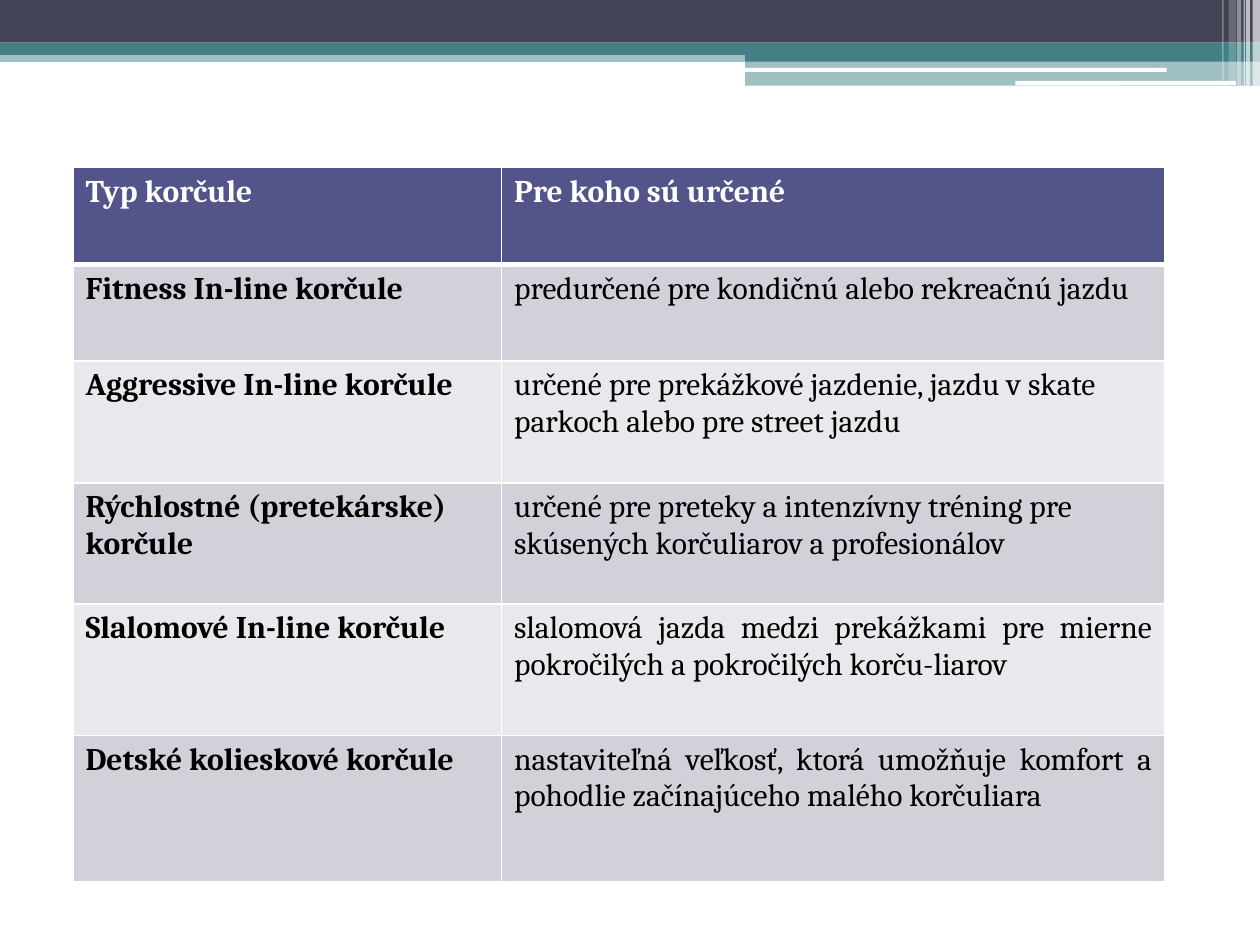
import pptx
import pptx.dml.color
import pptx.enum.shapes
import pptx.enum.text
import pptx.oxml
import pptx.oxml.ns
import pptx.util
from pptx.util import Cm

COLORS = {
    "navy": "424456",
    "teal": "438086",
    "white": "FFFFFF",
    "black": "000000",
    "header": "53548A",
    "band_dark": "D1D1DA",
    "band_light": "E9E9ED",
}
WIDTH, HEIGHT = 25.4, 19.05
PANEL_LEFT = 15.02
PANEL_WIDTH = WIDTH - PANEL_LEFT

# left, top, width, height (cm), colour, opacity in percent
BARS = [
    (0, 1.02, WIDTH, 0.23, "teal", 50),
    (0, 0, WIDTH, 0.86, "navy", 100),
    (0, 0.86, WIDTH, 0.25, "teal", 100),
    (PANEL_LEFT, 0.99, PANEL_WIDTH, 0.25, "teal", 100),
    (PANEL_LEFT, 1.23, PANEL_WIDTH, 0.5, "teal", 50),
]
ROUNDED_BARS = [(15.01, 1.37, 8.51, 0.08), (20.47, 1.63, 4.45, 0.09)]

# left, width, height (cm), opacity in percent
STRIPES = [
    (25.25, 0.15, 1.73, 65),
    (25.12, 0.08, 1.73, 65),
    (25.07, 0.03, 1.73, 60),
    (24.94, 0.08, 1.73, 40),
    (24.77, 0.15, 1.63, 20),
    (24.64, 0.03, 1.63, 30),
]

COL_WIDTHS = [8.64, 13.37]
ROW_HEIGHTS = [1.95, 1.95, 2.46, 2.44, 2.65, 2.94]
JUSTIFIED_ROWS = (4, 5)
ROWS = [
    ("Typ korčule", "Pre koho sú určené"),
    ("Fitness In-line korčule",
     "predurčené pre kondičnú alebo rekreačnú jazdu"),
    ("Aggressive In-line korčule",
     "určené pre prekážkové jazdenie, jazdu v skate parkoch alebo pre street jazdu"),
    ("Rýchlostné (pretekárske) korčule",
     "určené pre preteky a intenzívny tréning pre skúsených korčuliarov a profesionálov"),
    ("Slalomové In-line korčule",
     "slalomová jazda medzi prekážkami pre mierne pokročilých a pokročilých korču-liarov"),
    ("Detské kolieskové korčule",
     "nastaviteľná veľkosť, ktorá umožňuje komfort a pohodlie začínajúceho malého korčuliara"),
]


def rgb(name):
    return pptx.dml.color.RGBColor.from_string(COLORS[name])


class SlideBuilder:
    """Holds the text style and the slide being filled."""

    def __init__(self, s, font="Cambria", size=18):
        self.s = s
        self.font = font
        self.size = size

    def bar(self, left, top, width, height, color, opacity=100, rounded=False):
        kinds = pptx.enum.shapes.MSO_SHAPE
        kind = kinds.ROUNDED_RECTANGLE if rounded else kinds.RECTANGLE
        sp = self.s.shapes.add_shape(kind, Cm(left), Cm(top), Cm(width), Cm(height))
        sp.shadow.inherit = False
        sp.line.fill.background()
        sp.fill.solid()
        sp.fill.fore_color.rgb = rgb(color)
        if opacity < 100:
            clr = sp.fill._xPr.find(".//" + pptx.oxml.ns.qn("a:srgbClr"))
            clr.append(pptx.oxml.parse_xml(
                f'<a:alpha {pptx.oxml.ns.nsdecls("a")} val="{opacity * 1000}"/>'))

    def borders(self, cell, top, bottom):
        """Draw white cell borders; top and bottom are widths in points."""
        tcPr = cell._tc.get_or_add_tcPr()
        for i, (side, width) in enumerate(
                [("L", 1), ("R", 1), ("T", top), ("B", bottom)]):
            tcPr.insert(i, pptx.oxml.parse_xml(
                f'<a:ln{side} {pptx.oxml.ns.nsdecls("a")} w="{pptx.util.Pt(width)}">'
                f'<a:solidFill><a:srgbClr val="{COLORS["white"]}"/></a:solidFill>'
                f'</a:ln{side}>'))

    def cell(self, cell, text, fill, color, bold, justified):
        cell.fill.solid()
        cell.fill.fore_color.rgb = rgb(fill)
        p = cell.text_frame.paragraphs[0]
        if justified:
            p.alignment = pptx.enum.text.PP_ALIGN.JUSTIFY
        r = p.add_run()
        r.text = text
        r.font.name = self.font
        r.font.size = pptx.util.Pt(self.size)
        r.font.bold = bold
        r.font.color.rgb = rgb(color)

    def table(self, left, top, rows):
        table = self.s.shapes.add_table(
            len(rows), len(COL_WIDTHS), Cm(left), Cm(top),
            Cm(sum(COL_WIDTHS)), Cm(sum(ROW_HEIGHTS))).table
        for column, width in zip(table.columns, COL_WIDTHS):
            column.width = Cm(width)
        for i, texts in enumerate(rows):
            table.rows[i].height = Cm(ROW_HEIGHTS[i])
            header = i == 0
            fill = "header" if header else "band_dark" if i % 2 else "band_light"
            for j, text in enumerate(texts):
                cell = table.cell(i, j)
                self.cell(cell, text, fill, "white" if header else "black",
                          bold=header or j == 0,
                          justified=j == 1 and i in JUSTIFIED_ROWS)
                self.borders(cell, top=3 if i == 1 else 1, bottom=3 if header else 1)


def main():
    prs = pptx.Presentation()
    prs.slide_width, prs.slide_height = Cm(WIDTH), Cm(HEIGHT)
    builder = SlideBuilder(prs.slides.add_slide(prs.slide_layouts[6]))
    for bar in BARS:
        builder.bar(*bar)
    for box in ROUNDED_BARS:
        builder.bar(*box, "white", rounded=True)
    for left, width, height, opacity in STRIPES:
        builder.bar(left, 0, width, height, "white", opacity)
    builder.table(1.47, 3.38, ROWS)
    prs.save("out.pptx")


if __name__ == "__main__":
    main()
